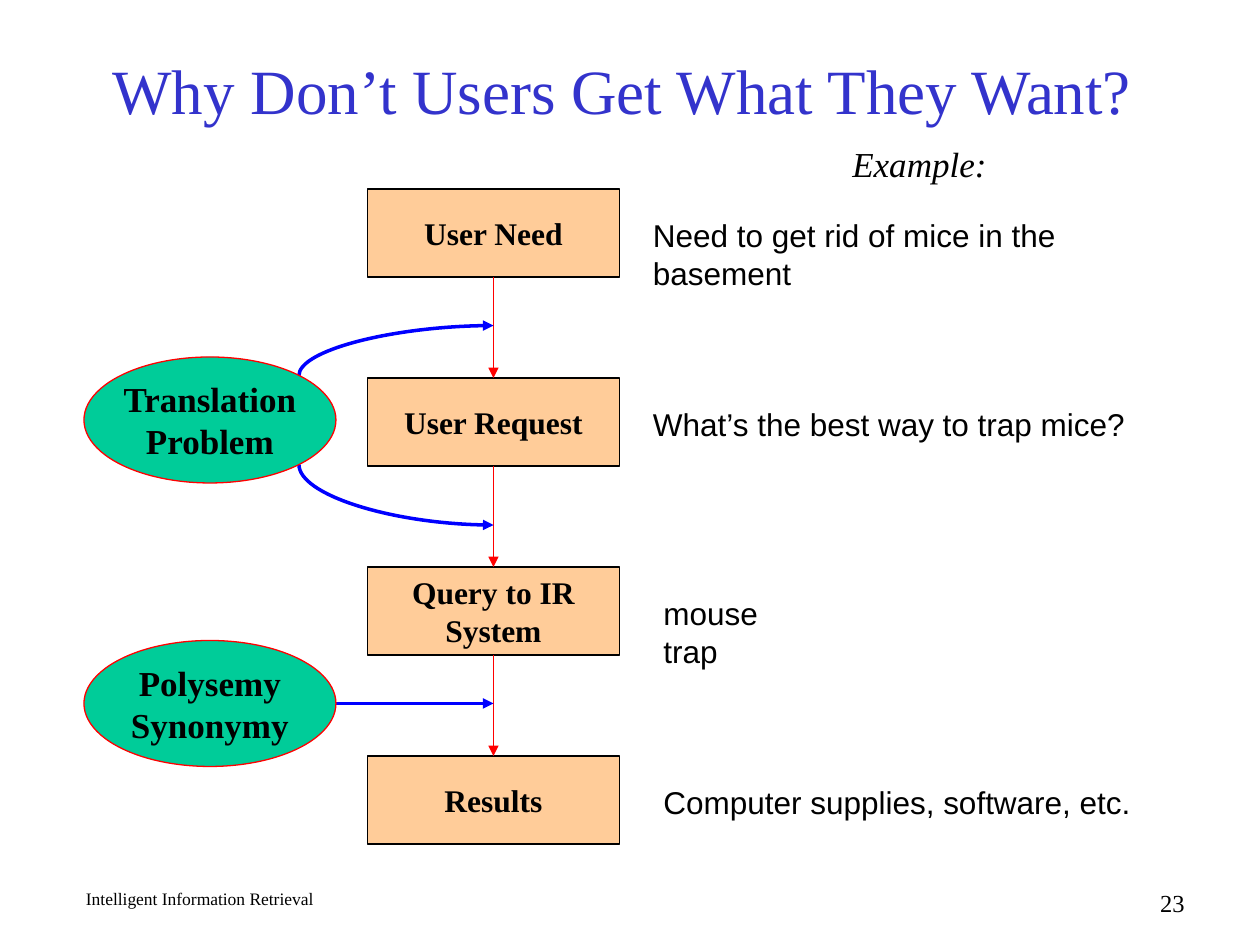
from lxml import etree
from pptx import Presentation
from pptx.dml.color import RGBColor
from pptx.enum.shapes import MSO_CONNECTOR as Link, MSO_SHAPE as Shape
from pptx.enum.text import MSO_ANCHOR as Anchor, PP_ALIGN as Align
from pptx.oxml.ns import qn
from pptx.util import Pt

SERIF, SANS = "Times New Roman", "Arial"
BLACK, RED, BLUE = "000000", "FF0000", "0000FF"
STEP_LEFT, STEP_TOP, STEP_WIDTH, STEP_HEIGHT, STEP_PITCH = 210, 108, 144, 50.4, 108
AXIS = STEP_LEFT + STEP_WIDTH / 2


def color(value):
    return RGBColor.from_string(value)


def write(shape, text, size, font=SERIF, ink=BLACK, bold=False, italic=False,
          align=Align.LEFT, anchor=Anchor.TOP, wrap=False):
    frame = shape.text_frame
    frame.text = text
    frame.word_wrap = wrap
    frame.vertical_anchor = anchor
    for para in frame.paragraphs:
        para.alignment = align
        for span in para.runs:
            span.font.name = font
            span.font.size = Pt(size)
            span.font.bold = bold
            span.font.italic = italic
            span.font.color.rgb = color(ink)


def add_text(page, left, top, width, height, text, size, **style):
    box = page.shapes.add_textbox(Pt(left), Pt(top), Pt(width), Pt(height))
    write(box, text, size, **style)


def add_node(page, kind, left, top, width, height, text, size, fill, line):
    node = page.shapes.add_shape(kind, Pt(left), Pt(top), Pt(width), Pt(height))
    node.shadow.inherit = False
    node.fill.solid()
    node.fill.fore_color.rgb = color(fill)
    node.line.color.rgb = color(line)
    node.line.width = Pt(0.75)
    write(node, text, size, bold=True, align=Align.CENTER, anchor=Anchor.MIDDLE)


def add_arrow(page, x1, y1, x2, y2, ink, width, kind=Link.STRAIGHT):
    arrow = page.shapes.add_connector(kind, Pt(x1), Pt(y1), Pt(x2), Pt(y2))
    arrow.line.color.rgb = color(ink)
    arrow.line.width = Pt(width)
    etree.SubElement(arrow.line._get_or_add_ln(), qn("a:tailEnd"), type="triangle")
    etree.SubElement(arrow._element.spPr, qn("a:effectLst"))
    return arrow


def add_curve(page, x1, y1, x2, y2):
    """Quarter bend that leaves vertically and arrives horizontally."""
    # The bend is stored lying on its side, then turned by 270 degrees
    width, height = abs(y2 - y1), x2 - x1
    left, top = (x1 + x2 - width) / 2, (y1 + y2 - height) / 2
    curve = add_arrow(page, left, top, left + width, top + height, BLUE, 2, Link.CURVE)
    properties = curve._element.spPr
    properties.find(qn("a:prstGeom")).set("prst", "curvedConnector2")
    transform = properties.find(qn("a:xfrm"))
    transform.set("rot", str(270 * 60000))
    if y2 > y1:
        transform.set("flipH", "1")


def main():
    deck = Presentation()
    deck.slide_width, deck.slide_height = Pt(720), Pt(540)
    page = deck.slides.add_slide(deck.slide_layouts[6])

    # Footer and title
    add_text(page, 42, 504, 270, 18, "Intelligent Information Retrieval", 10, wrap=True)
    add_text(page, 534, 504, 150, 18, "23", 14, align=Align.RIGHT, wrap=True)
    add_text(page, 54, 24, 612, 54, "Why Don’t Users Get What They Want? ", 36,
             ink="3333CC", align=Align.CENTER, anchor=Anchor.MIDDLE, wrap=True)

    # Steps, each with its example on the right
    steps = [
        ("User Need", "Need to get rid of mice in the basement", 366, 328),
        ("User Request", "What’s the best way to trap mice?", 366, 284),
        ("Query to IR\nSystem", "mouse trap", 372, 104),
        ("Results", "Computer supplies, software, etc.", 372, 282),
    ]
    add_text(page, 480, 78, 91.5, 31, "Example:", 20, italic=True)
    for index, (step, example, left, width) in enumerate(steps):
        top = STEP_TOP + index * STEP_PITCH
        add_node(page, Shape.RECTANGLE, STEP_LEFT, top, STEP_WIDTH, STEP_HEIGHT,
                 step, 18, "FFCC99", BLACK)
        add_text(page, left, top + 12, width, 29, example, 18, font=SANS)
        if index:
            add_arrow(page, AXIS, top - STEP_PITCH + STEP_HEIGHT, AXIS, top, RED, 0.75)

    # Curves run behind the problems they start from
    add_curve(page, 170.8, 214.6, AXIS, 186)
    add_curve(page, 170.8, 265.4, AXIS, 300)
    add_arrow(page, 192, 402, AXIS, 402, BLUE, 2)

    # Problems
    for top, text in [(204, "Translation\nProblem"), (366, "Polysemy\nSynonymy")]:
        add_node(page, Shape.OVAL, 48, top, 144, 72, text, 20, "00CC99", RED)

    deck.save("out.pptx")


if __name__ == "__main__":
    main()
